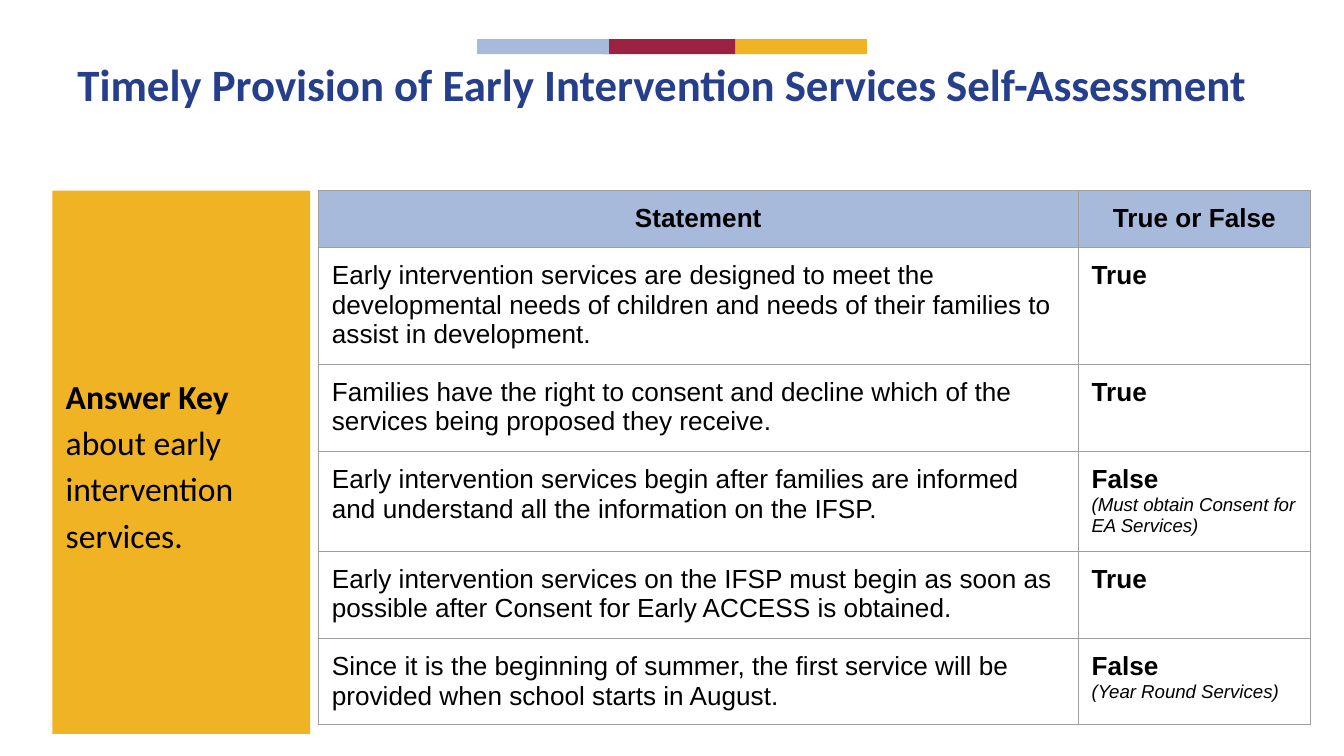
from lxml.etree import SubElement
from pptx import Presentation
from pptx.dml.color import RGBColor
from pptx.enum.shapes import MSO_SHAPE as Shape
from pptx.enum.text import MSO_ANCHOR as Anchor, MSO_AUTO_SIZE as AutoSize, PP_ALIGN as Align
from pptx.oxml.ns import qn
from pptx.util import Pt

BLUE, RED, GOLD = "A8BADB", "9B2242", "F0B323"
NAVY, BLACK, GREY = "263F8C", "000000", "9E9E9E"
INSET = 7.2

ROWS = [
    (62.6, "Early intervention services are designed to meet the developmental needs of "
           "children and needs of their families to assist in development.", "True", None),
    (46.8, "Families have the right to consent and decline which of the services being "
           "proposed they receive.", "True", None),
    (53.3, "Early intervention services begin after families are informed and understand "
           "all the information on the IFSP.", "False", "(Must obtain Consent for EA Services)"),
    (46.8, "Early intervention services on the IFSP must begin as soon as possible after "
           "Consent for Early ACCESS is obtained.", "True", None),
    (46.2, "Since it is the beginning of summer, the first service will be provided when "
           "school starts in August.", "False", "(Year Round Services)"),
]


def color(hex_text):
    return RGBColor.from_string(hex_text)


def add_text(paragraph, text, size=14, font="Arial", fill=BLACK, bold=False, italic=False,
             align=Align.LEFT):
    paragraph.alignment = align
    run = paragraph.add_run()
    run.text = text
    run.font.size, run.font.name = Pt(size), font
    run.font.bold, run.font.italic = bold, italic
    run.font.color.rgb = color(fill)


def set_borders(cell, hex_text, width):
    properties = cell._tc.get_or_add_tcPr()
    for index, side in enumerate(("a:lnL", "a:lnR", "a:lnT", "a:lnB")):
        line = properties.makeelement(qn(side), {"w": str(Pt(width))})
        fill = SubElement(line, qn("a:solidFill"))
        SubElement(fill, qn("a:srgbClr"), val=hex_text)
        properties.insert(index, line)


class SlideBuilder:
    def __init__(self, slide):
        self.slide = slide

    def bar(self, left, top, width, height, fill):
        shape = self.slide.shapes.add_shape(Shape.RECTANGLE, Pt(left), Pt(top), Pt(width), Pt(height))
        shape.shadow.inherit = False
        shape.fill.solid()
        shape.fill.fore_color.rgb = color(fill)
        shape.line.fill.background()

    def place(self, placeholder, left, top, width, height, anchor):
        """Move a placeholder and return its emptied first paragraph."""
        placeholder.left, placeholder.top = Pt(left), Pt(top)
        placeholder.width, placeholder.height = Pt(width), Pt(height)
        frame = placeholder.text_frame
        frame.word_wrap, frame.auto_size = True, AutoSize.NONE
        frame.vertical_anchor = anchor
        frame.margin_left = frame.margin_right = Pt(INSET)
        frame.margin_top = frame.margin_bottom = Pt(INSET)
        paragraph = frame.paragraphs[0]
        paragraph.space_before = Pt(0)
        return paragraph

    def title(self, text):
        paragraph = self.place(self.slide.shapes.title, 13.7, 23, 681.8, 67, Anchor.TOP)
        add_text(paragraph, text, size=24, font="Calibri", fill=NAVY, bold=True, align=Align.CENTER)

    def side_panel(self, heading, text):
        body = self.slide.placeholders[1]
        body.fill.solid()
        body.fill.fore_color.rgb = color(GOLD)
        paragraph = self.place(body, 28, 102.2, 138.2, 291, Anchor.MIDDLE)
        paragraph.line_spacing = 1.15
        properties = paragraph._p.get_or_add_pPr()
        properties.set("marL", "0")
        properties.set("indent", "0")
        SubElement(properties, qn("a:buNone"))
        add_text(paragraph, heading, size=18, font="Calibri", bold=True)
        add_text(paragraph, text, size=18, font="Calibri")

    def cell(self, cell, text, note=None, fill=None, **text_format):
        cell.margin_left = cell.margin_right = Pt(INSET)
        cell.margin_top = cell.margin_bottom = Pt(INSET)
        if fill:
            cell.fill.solid()
            cell.fill.fore_color.rgb = color(fill)
        else:
            cell.fill.background()
        set_borders(cell, GREY, 0.75)
        add_text(cell.text_frame.paragraphs[0], text, **text_format)
        if note:
            add_text(cell.text_frame.add_paragraph(), note, size=10, italic=True)

    def answer_table(self, headings, rows):
        widths = (407, 124.6)
        heights = [30.4] + [row[0] for row in rows]
        table = self.slide.shapes.add_table(len(heights), len(widths), Pt(170.6), Pt(102.2),
                                            Pt(sum(widths)), Pt(sum(heights))).table
        table.first_row = table.horz_banding = False
        for column, width in zip(table.columns, widths):
            column.width = Pt(width)
        for row, height in zip(table.rows, heights):
            row.height = Pt(height)
        for index, heading in enumerate(headings):
            self.cell(table.cell(0, index), heading, fill=BLUE, bold=True, align=Align.CENTER)
        for index, (_, statement, answer, note) in enumerate(rows, start=1):
            self.cell(table.cell(index, 0), statement)
            self.cell(table.cell(index, 1), answer, note=note, bold=True)


def main():
    presentation = Presentation()
    presentation.slide_width, presentation.slide_height = Pt(720), Pt(405)
    builder = SlideBuilder(presentation.slides.add_slide(presentation.slide_layouts[1]))
    for left, fill in ((393.8, GOLD), (323.3, RED), (255.6, BLUE)):
        builder.bar(left, 21, 70.6, 8, fill)
    builder.title("Timely Provision of Early Intervention Services Self-Assessment")
    builder.side_panel("Answer Key ", "about early intervention services.")
    builder.answer_table(("Statement", "True or False"), ROWS)
    presentation.save("out.pptx")


if __name__ == "__main__":
    main()
